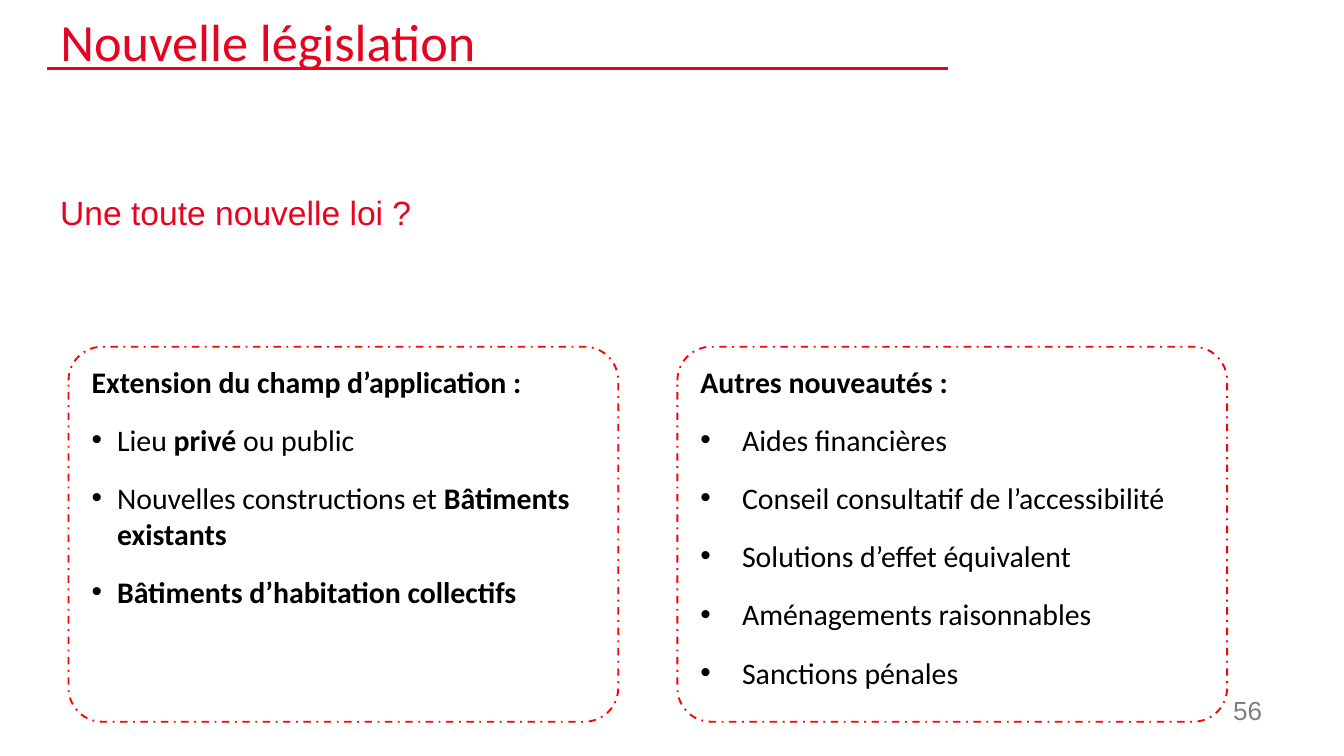
import dataclasses
import pptx
import pptx.dml.color
import pptx.enum.dml
import pptx.enum.shapes
import pptx.enum.text
import pptx.oxml.ns
import pptx.util
import lxml.etree

Inches = pptx.util.Inches
Align = pptx.enum.text.PP_ALIGN
Anchor = pptx.enum.text.MSO_ANCHOR
qn = pptx.oxml.ns.qn


@dataclasses.dataclass
class Theme:
    red: str = "E40520"
    edge: str = "FF0000"
    ink: str = "000000"
    grey: str = "808080"
    head: str = "Calibri"
    body: str = "Arial"
    title: int = 28
    sub: int = 18
    text: int = 16
    page: int = 14


def rgb(code):
    return pptx.dml.color.RGBColor.from_string(code)


class Deck:
    def __init__(self, theme):
        self.theme = theme
        self.file = pptx.Presentation()
        self.file.slide_width = Inches(10)
        self.file.slide_height = Inches(10 * 9 / 16)
        self.slide = None

    def add(self):
        self.slide = self.file.slides.add_slide(self.file.slide_layouts[5])

    def font(self, para, name, size, color):
        para.font.name = name
        para.font.size = pptx.util.Pt(size)
        para.font.color.rgb = rgb(color)

    def title(self, text, left, top, width, height):
        shape = self.slide.shapes.title
        shape.left, shape.top = Inches(left), Inches(top)
        shape.width, shape.height = Inches(width), Inches(height)
        frame = shape.text_frame
        frame.text = text
        frame.auto_size = pptx.enum.text.MSO_AUTO_SIZE.NONE
        frame.vertical_anchor = Anchor.MIDDLE
        para = frame.paragraphs[0]
        para.alignment = Align.LEFT
        self.font(para, self.theme.head, self.theme.title, self.theme.red)

    def rule(self, left, right, top):
        line = self.slide.shapes.add_connector(
            pptx.enum.shapes.MSO_CONNECTOR.STRAIGHT,
            Inches(left), Inches(top), Inches(right), Inches(top))
        line.line.color.rgb = rgb(self.theme.red)
        line.line.width = pptx.util.Pt(1.5)
        props = line._element.spPr
        lxml.etree.SubElement(props, qn("a:effectLst"))

    def label(self, text, left, top, width, height, size, color,
              align=Align.LEFT):
        box = self.slide.shapes.add_textbox(
            Inches(left), Inches(top), Inches(width), Inches(height))
        box.text_frame.word_wrap = True
        para = box.text_frame.paragraphs[0]
        para.text = text
        para.alignment = align
        self.font(para, self.theme.body, size, color)

    def bullet(self, para, indent):
        props = para._p.get_or_add_pPr()
        props.set("marL", str(Inches(indent)))
        props.set("indent", str(-Inches(indent)))
        font = lxml.etree.SubElement(props, qn("a:buFont"))
        font.set("typeface", self.theme.body)
        lxml.etree.SubElement(props, qn("a:buChar")).set("char", "•")

    def panel(self, head, items, left, top, width, height, indent):
        """Draw a dashed box; in items, *stars* enclose bold words."""
        box = self.slide.shapes.add_shape(
            pptx.enum.shapes.MSO_SHAPE.ROUNDED_RECTANGLE,
            Inches(left), Inches(top), Inches(width), Inches(height))
        box.adjustments[0] = 0.09
        box.shadow.inherit = False
        box.fill.background()
        box.line.color.rgb = rgb(self.theme.edge)
        box.line.width = pptx.util.Pt(1)
        box.line.dash_style = pptx.enum.dml.MSO_LINE.DASH_DOT
        frame = box.text_frame
        frame.word_wrap = True
        frame.vertical_anchor = Anchor.TOP
        for row, text in enumerate([f"*{head}*"] + items):
            para = frame.add_paragraph() if row else frame.paragraphs[0]
            para.alignment = Align.LEFT
            para.space_after = pptx.util.Pt(12)
            if row:
                self.bullet(para, indent)
            self.font(para, self.theme.head, self.theme.text, self.theme.ink)
            for part, words in enumerate(text.split("*")):
                if words:
                    run = para.add_run()
                    run.text = words
                    run.font.bold = part % 2 == 1


def main():
    theme = Theme()
    deck = Deck(theme)
    deck.add()
    deck.rule(7.05, 0.35, 0.51)
    deck.title("Nouvelle législation", 0.35, 0.1, 6.77, 0.41)
    deck.label("56", 8.78, 5.12, 0.71, 0.41, theme.page, theme.grey,
               Align.RIGHT)
    deck.label("Une toute nouvelle loi ?", 0.35, 1.38, 8.9, 0.4,
               theme.sub, theme.red)

    panels = [
        ("Extension du champ d’application :", 0.19, [
            "Lieu *privé* ou public",
            "Nouvelles constructions et *Bâtiments existants*",
            "*Bâtiments d’habitation collectifs*"]),
        ("Autres nouveautés :", 0.31, [
            "Aides financières",
            "Conseil consultatif de l’accessibilité",
            "Solutions d’effet équivalent",
            "Aménagements raisonnables",
            "Sanctions pénales"]),
    ]
    width, gap = 4.09, 0.44
    for col, (head, indent, items) in enumerate(panels):
        left = 0.51 + col * (width + gap)
        deck.panel(head, items, left, 2.58, width, 2.79, indent)

    deck.file.save("out.pptx")


if __name__ == "__main__":
    main()
